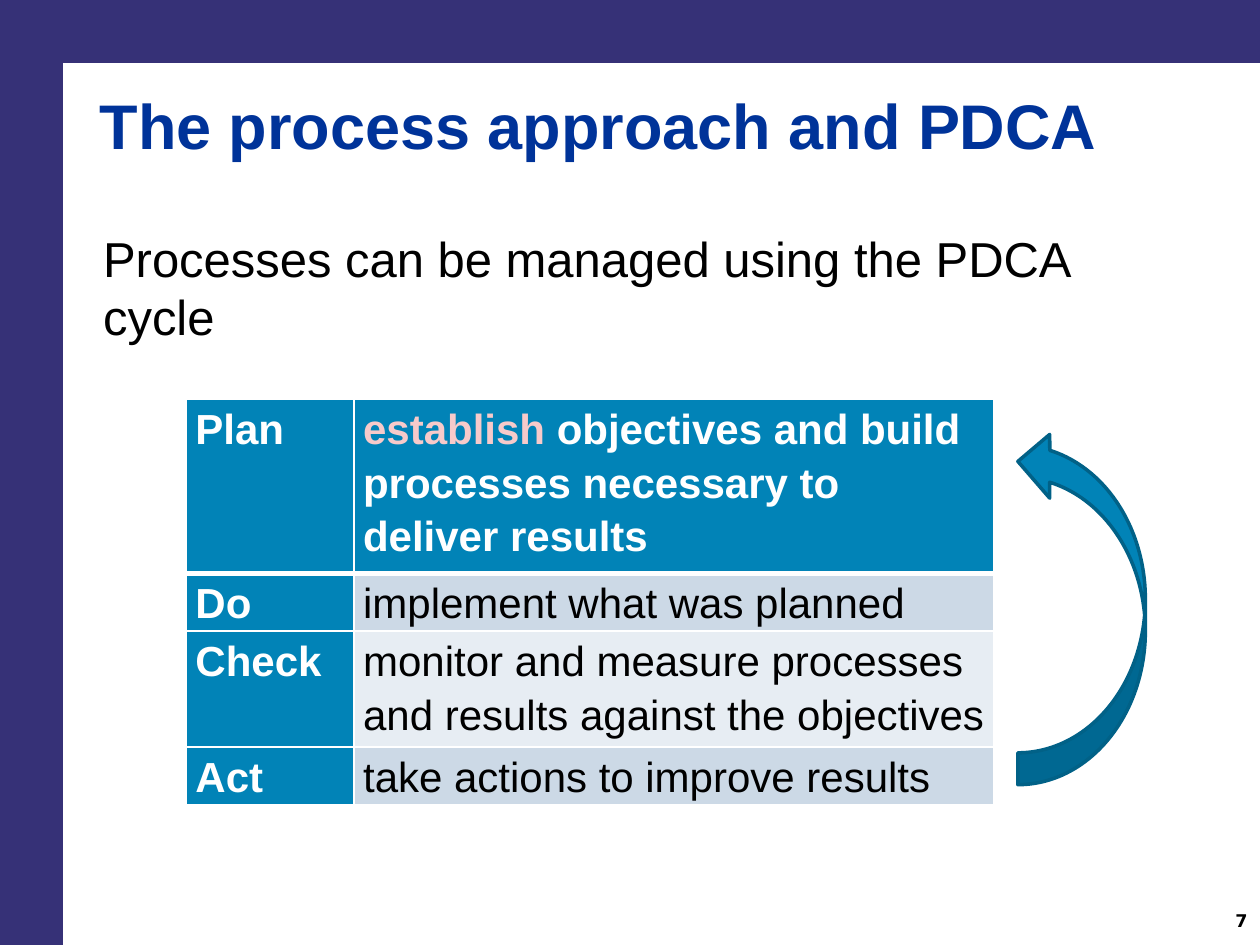
from lxml.etree import SubElement
from pptx import Presentation
from pptx.dml.color import RGBColor
from pptx.enum.shapes import MSO_SHAPE
from pptx.enum.text import MSO_ANCHOR, PP_ALIGN
from pptx.oxml.ns import qn
from pptx.util import Cm, Pt

COLORS = {
    "frame": "363177", "title": "003399", "black": "000000", "white": "FFFFFF",
    "teal": "0183B7", "edge": "016187", "pink": "F7CACA",
    "band": "CCD9E6", "light": "E7EDF3",
}


def rgb(name):
    return RGBColor.from_string(COLORS[name])


class SlideBuilder:
    font = "Arial"

    def __init__(self, slide):
        self.s = slide

    def add_runs(self, tf, runs, fmt, spacing=1.0, align=PP_ALIGN.LEFT):
        """Fill the first paragraph with (text, color) runs."""
        p = tf.paragraphs[0]
        p.line_spacing, p.alignment = spacing, align
        for text, color in runs:
            r = p.add_run()
            r.text = text
            for key, value in {"name": self.font, "bold": False, **fmt}.items():
                setattr(r.font, key, value)
            r.font.color.rgb = rgb(color)

    def text(self, box, runs, fmt, insets=(0.23, 0.1), anchor=MSO_ANCHOR.TOP, **para):
        tf = self.s.shapes.add_textbox(*map(Cm, box)).text_frame
        x, y = map(Cm, insets)
        frame = {"word_wrap": True, "vertical_anchor": anchor, "margin_left": x,
                 "margin_right": x, "margin_top": y, "margin_bottom": y}
        for key, value in frame.items():
            setattr(tf, key, value)
        self.add_runs(tf, runs, fmt, **para)

    def shape(self, kind, box, fill, line=None):
        sp = self.s.shapes.add_shape(kind, *map(Cm, box))
        sp.shadow.inherit = False
        sp.fill.solid()
        sp.fill.fore_color.rgb = rgb(fill)
        if line:
            sp.line.color.rgb = rgb(line)
            sp.line.width = Pt(2)
        else:
            sp.line.fill.background()
        return sp

    def borders(self, cell, widths):
        """Draw white borders; widths are points by side."""
        tc_pr = cell._tc.get_or_add_tcPr()
        for i, (side, width) in enumerate(widths.items()):
            ln = SubElement(tc_pr, qn(f"a:ln{side}"), w=str(Pt(width)))
            fill = SubElement(ln, qn("a:solidFill"))
            SubElement(fill, qn("a:srgbClr"), val=COLORS["white"])
            tc_pr.insert(i, ln)

    def table(self, left, top, widths, line_height, rows):
        heights = [line_height * lines for lines, *_ in rows]
        box = (left, top, sum(widths), sum(heights))
        tbl = self.s.shapes.add_table(len(rows), len(widths), *map(Cm, box)).table
        for col, width in zip(tbl.columns, widths):
            col.width = Cm(width)
        for i, (_, step, runs, fill) in enumerate(rows):
            tbl.rows[i].height = Cm(heights[i])
            cells = [([(step, "white")], "teal", True), (runs, fill, i == 0)]
            for j, (content, color, bold) in enumerate(cells):
                cell = tbl.cell(i, j)
                cell.margin_left = cell.margin_right = Cm(0.18)
                cell.margin_top = cell.margin_bottom = 0
                cell.fill.solid()
                cell.fill.fore_color.rgb = rgb(color)
                self.add_runs(cell.text_frame, content,
                              {"size": Pt(24), "bold": bold}, spacing=1.15)
                self.borders(cell, {"L": 1, "R": 1, "T": 3 if i == 1 else 1,
                                    "B": 3 if i == 0 else 1})


def main():
    prs = Presentation()
    prs.slide_width, prs.slide_height = Cm(25.4), Cm(19.05)
    b = SlideBuilder(prs.slides.add_slide(prs.slide_layouts[6]))

    # Frame bars
    for box in ((0, 0, 25.4, 1.27), (0, 0, 1.27, 19.05)):
        b.shape(MSO_SHAPE.RECTANGLE, box, "frame")

    # Title, introduction and slide number
    b.text((1.78, 1.3, 22.9, 2.08), [("The process approach and PDCA", "title")],
           {"size": Pt(36), "bold": True}, anchor=MSO_ANCHOR.BOTTOM, spacing=0.9)
    b.text((1.85, 4.5, 21.29, 2.6),
           [("Processes can be managed using the PDCA cycle", "black")],
           {"size": Pt(28)})
    b.text((23.09, 18.26, 2.31, 0.81), [("7", "black")],
           {"size": Pt(10), "bold": True, "name": "DejaVu Sans"},
           insets=(0.25, 0.13), spacing=0.9, align=PP_ALIGN.RIGHT)

    # PDCA table: text lines, step, description, fill
    b.table(3.76, 8.05, (3.38, 12.9), 1.08, [
        (3, "Plan", [("establish ", "pink"),
                     ("objectives and build processes necessary to deliver results",
                      "white")], "teal"),
        (1, "Do", [("implement what was planned", "black")], "band"),
        (2, "Check", [("monitor and measure processes and results against "
                       "the objectives", "black")], "light"),
        (1, "Act", [("take actions to improve results", "black")], "band"),
    ])

    # Arrow from Act back to Plan
    arrow = b.shape(MSO_SHAPE.CURVED_LEFT_ARROW, (20.52, 8.66, 2.57, 7.16),
                    "teal", "edge")
    arrow._element.spPr.find(qn("a:xfrm")).set("flipV", "1")

    prs.save("out.pptx")


if __name__ == "__main__":
    main()
